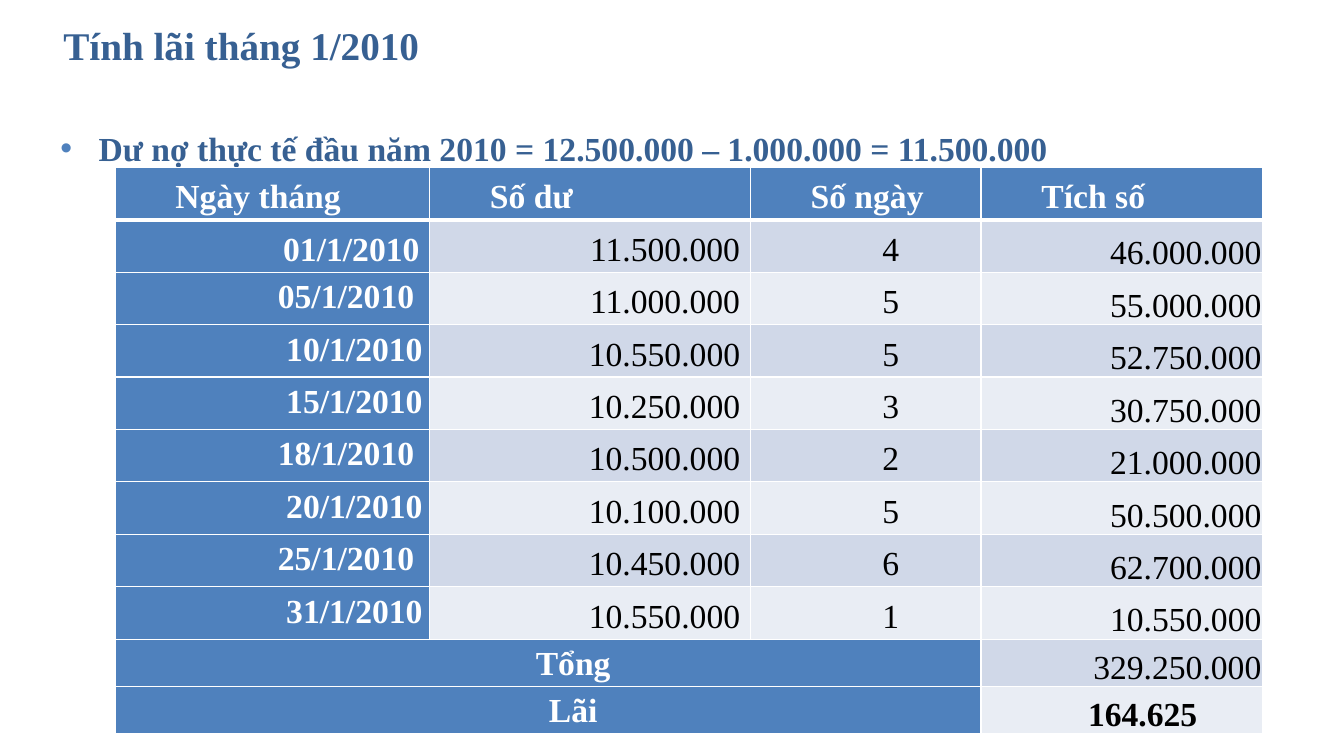
"""Build the January 2010 interest calculation slide."""
from dataclasses import dataclass

import lxml.etree
import pptx
import pptx.dml.color
import pptx.enum.text
import pptx.oxml.ns
import pptx.slide
import pptx.table
import pptx.text.text
import pptx.util

Inches = pptx.util.Inches
Pt = pptx.util.Pt
RGBColor = pptx.dml.color.RGBColor
Align = pptx.enum.text.PP_ALIGN
Anchor = pptx.enum.text.MSO_ANCHOR
qn = pptx.oxml.ns.qn

FONT = "Times New Roman"
HEADING = RGBColor(0x37, 0x60, 0x92)
ACCENT = RGBColor(0x4F, 0x81, 0xBD)
BAND_DARK = RGBColor(0xD0, 0xD8, 0xE8)
BAND_LIGHT = RGBColor(0xE9, 0xED, 0xF4)
WHITE = RGBColor(0xFF, 0xFF, 0xFF)
BLACK = RGBColor(0, 0, 0)

HEADERS = ("Ngày tháng", "Số dư", "Số ngày", "Tích số")
BALANCES = (
    ("01/1/2010", "11.500.000", "4", "46.000.000"),
    ("05/1/2010 ", "11.000.000", "5", "55.000.000"),
    ("10/1/2010", "10.550.000", "5", "52.750.000"),
    ("15/1/2010", "10.250.000", "3", "30.750.000"),
    ("18/1/2010 ", "10.500.000", "2", "21.000.000"),
    ("20/1/2010", "10.100.000", "5", "50.500.000"),
    ("25/1/2010 ", "10.450.000", "6", "62.700.000"),
    ("31/1/2010", "10.550.000", "1", "10.550.000"),
)
COLUMN_WIDTHS = (3.12, 3.18, 2.29, 2.79)
ROW_HEIGHTS = (0.5,) * (1 + len(BALANCES)) + (0.47,) * 2
DEFAULT_INSETS = (0.1, 0.06, 0.1, 0)
LABEL_INSETS = (0.07, 0.01, 0.07, 0)
PRODUCT_INSETS = (0.01, 0.01, 0.01, 0)


@dataclass(frozen=True)
class CellStyle:
    align: Align
    insets: tuple[float, ...] = DEFAULT_INSETS
    anchor: Anchor = Anchor.TOP
    label: bool = False
    bold: bool = False


HEADER = CellStyle(Align.JUSTIFY, label=True, bold=True)
FIRST_DATE = CellStyle(Align.RIGHT, label=True, bold=True)
DATE = CellStyle(Align.RIGHT, LABEL_INSETS, label=True, bold=True)
BALANCE = CellStyle(Align.RIGHT)
DAYS = CellStyle(Align.CENTER)
PRODUCT = CellStyle(Align.RIGHT, PRODUCT_INSETS, Anchor.BOTTOM)
SUMMARY = CellStyle(Align.CENTER, LABEL_INSETS, label=True, bold=True)
INTEREST = CellStyle(Align.CENTER, PRODUCT_INSETS, Anchor.BOTTOM, bold=True)


def set_font(paragraph: pptx.text.text._Paragraph, size: int, color: RGBColor, bold: bool) -> None:
    paragraph.font.name = FONT
    paragraph.font.size = Pt(size)
    paragraph.font.bold = bold
    paragraph.font.color.rgb = color


def add_heading(slide: pptx.slide.Slide, text: str, box: tuple[float, ...],
                size: int, anchor: Anchor, bulleted: bool = False) -> None:
    frame = slide.shapes.add_textbox(*map(Inches, box)).text_frame
    frame.word_wrap = True
    frame.vertical_anchor = anchor
    paragraph = frame.paragraphs[0]
    paragraph.text = text
    if bulleted:
        paragraph.line_spacing = 1.5
        properties = paragraph._p.get_or_add_pPr()
        properties.set("marL", str(Inches(0.38)))
        properties.set("indent", str(-Inches(0.38)))
        bullet_color = lxml.etree.SubElement(properties, qn("a:buClr"))
        lxml.etree.SubElement(bullet_color, qn("a:srgbClr"), val=str(ACCENT))
        lxml.etree.SubElement(properties, qn("a:buFont"), typeface="Arial")
        lxml.etree.SubElement(properties, qn("a:buChar"), char="•")
    set_font(paragraph, size, HEADING, True)


def set_borders(cell: pptx.table._Cell, row: int) -> None:
    properties = cell._tc.get_or_add_tcPr()
    widths = {"lnL": 1, "lnR": 1, "lnT": 3 if row == 1 else 1, "lnB": 3 if row == 0 else 1}
    for side, width in widths.items():
        line = lxml.etree.SubElement(properties, qn(f"a:{side}"), w=str(Pt(width)))
        fill = lxml.etree.SubElement(line, qn("a:solidFill"))
        lxml.etree.SubElement(fill, qn("a:srgbClr"), val=str(WHITE))


def fill_cell(table: pptx.table.Table, row: int, column: int, text: str, style: CellStyle) -> None:
    cell = table.cell(row, column)
    band = BAND_DARK if row % 2 else BAND_LIGHT
    cell.fill.solid()
    cell.fill.fore_color.rgb = ACCENT if style.label else band
    cell.vertical_anchor = style.anchor
    (cell.margin_left, cell.margin_top,
     cell.margin_right, cell.margin_bottom) = map(Inches, style.insets)
    paragraph = cell.text_frame.paragraphs[0]
    paragraph.text = text
    paragraph.alignment = style.align
    paragraph.line_spacing = 1.15
    paragraph.space_after = Pt(10)
    properties = paragraph._p.get_or_add_pPr()
    properties.set("marL", str(Inches(0.5)))
    properties.set("indent", "0")
    set_font(paragraph, 24, WHITE if style.label else BLACK, style.bold)


def add_interest_table(slide: pptx.slide.Slide) -> None:
    table = slide.shapes.add_table(
        len(ROW_HEIGHTS), len(COLUMN_WIDTHS),
        Inches(1.14), Inches(1.66), Inches(sum(COLUMN_WIDTHS)), Inches(sum(ROW_HEIGHTS))).table
    for column, width in zip(table.columns, COLUMN_WIDTHS):
        column.width = Inches(width)
    for index, height in enumerate(ROW_HEIGHTS):
        table.rows[index].height = Inches(height)
        for cell in table.rows[index].cells:
            set_borders(cell, index)

    for column, header in enumerate(HEADERS):
        fill_cell(table, 0, column, header, HEADER)
    for row, values in enumerate(BALANCES, start=1):
        styles = (FIRST_DATE if row == 1 else DATE, BALANCE, DAYS, PRODUCT)
        for column, (value, style) in enumerate(zip(values, styles)):
            fill_cell(table, row, column, value, style)
    totals = (("Tổng", "329.250.000", PRODUCT), ("Lãi", "164.625 ", INTEREST))
    for row, (label, amount, style) in enumerate(totals, start=1 + len(BALANCES)):
        table.cell(row, 0).merge(table.cell(row, 2))
        fill_cell(table, row, 0, label, SUMMARY)
        fill_cell(table, row, 3, amount, style)


def main() -> None:
    presentation = pptx.Presentation()
    presentation.slide_width = Inches(13.33)
    presentation.slide_height = Inches(7.5)
    slide = presentation.slides.add_slide(presentation.slide_layouts[6])
    add_heading(slide, "Tính lãi tháng 1/2010", (0.53, 0.03, 12.53, 0.83), 28, Anchor.MIDDLE)
    add_heading(slide, "Dư nợ thực tế đầu năm 2010 = 12.500.000 – 1.000.000 = 11.500.000",
                (0.5, 1.02, 12.4, 5.79), 24, Anchor.TOP, bulleted=True)
    add_interest_table(slide)
    presentation.save("out.pptx")


if __name__ == "__main__":
    main()
